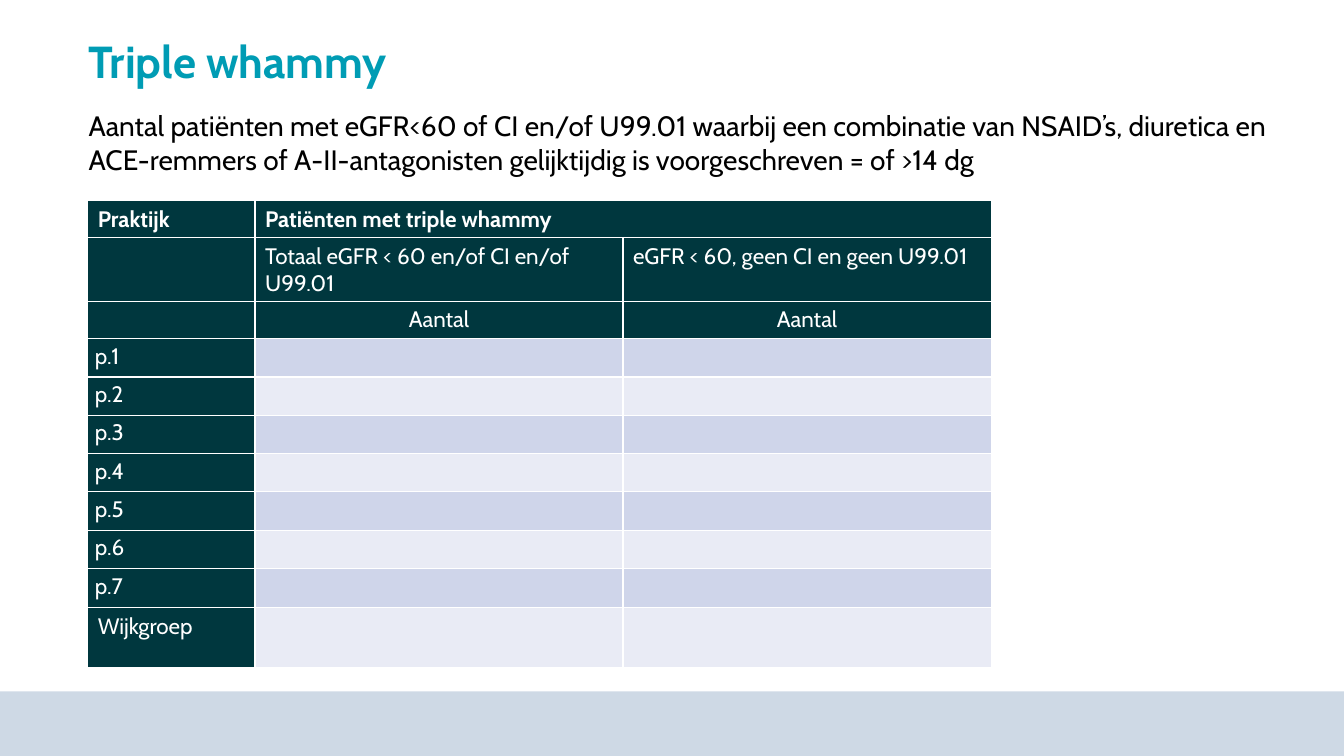
from lxml import etree
from pptx import Presentation
from pptx.dml.color import RGBColor
from pptx.enum.shapes import MSO_SHAPE
from pptx.enum.text import MSO_ANCHOR, PP_ALIGN
from pptx.oxml.ns import qn
from pptx.util import Inches, Pt

LEFT, CENTER = PP_ALIGN.LEFT, PP_ALIGN.CENTER
TOP = MSO_ANCHOR.TOP
RECTANGLE = MSO_SHAPE.RECTANGLE

FONT = "Cabin"
TEAL, DARK, WHITE, BLACK = "009CB4", "00373E", "FFFFFF", "000000"
FOOTER_BLUE = "CED9E5"
BANDS = ["CFD5EA", "E9EBF5"]

TITLE = "Triple whammy"
INTRO = ("Aantal patiënten met eGFR<60 of CI en/of U99.01 waarbij een combinatie "
         "van NSAID’s, diuretica en ACE-remmers of A-II-antagonisten gelijktijdig "
         "is voorgeschreven = of >14 dg")
HEADINGS = [
    ["Praktijk", "Patiënten met triple whammy", ""],
    ["", "Totaal eGFR < 60 en/of CI en/of U99.01", "eGFR < 60, geen CI en geen U99.01"],
    ["", "Aantal", "Aantal"],
]
PRACTICES = [f"p.{number}" for number in range(1, 8)]
TOTAL = "Wijkgroep"

ROWS = HEADINGS + [[label, "", ""] for label in PRACTICES + [TOTAL]]
COLUMN_WIDTHS = [1.66, 3.65, 3.65]
ROW_HEIGHTS = [0.36, 0.63, 0.37] + [0.38] * 6 + [0.39, 0.59]


def rgb(color):
    return RGBColor.from_string(color)


def write(frame, text, size, color, bold=False, align=LEFT):
    frame.word_wrap = True
    frame.text = text
    paragraph = frame.paragraphs[0]
    paragraph.alignment = align
    for run in paragraph.runs:
        run.font.name = FONT
        run.font.size = Pt(size)
        run.font.bold = bold
        run.font.color.rgb = rgb(color)
    return paragraph


def size_empty(cell, size):
    """Give an empty cell a text size, so that its row does not grow."""
    paragraph = cell.text_frame.paragraphs[0]._p
    etree.SubElement(paragraph, qn("a:endParaRPr"), sz=str(size * 100))


prs = Presentation()
prs.slide_width, prs.slide_height = Inches(13.33), Inches(7.5)
slide = prs.slides.add_slide(prs.slide_layouts[5])

footer = slide.shapes.add_shape(RECTANGLE, 0, Inches(6.86), prs.slide_width, Inches(0.64))
footer.shadow.inherit = False
footer.fill.solid()
footer.fill.fore_color.rgb = rgb(FOOTER_BLUE)
footer.line.fill.background()

title = slide.shapes.title
title.left, title.top = Inches(0.78), Inches(0.34)
title.width, title.height = Inches(10.68), Inches(0.59)
write(title.text_frame, TITLE, 32, TEAL, bold=True).line_spacing = 0.9

intro = slide.shapes.add_textbox(Inches(0.78), Inches(1.03), Inches(12.23), Inches(0.77))
write(intro.text_frame, INTRO, 20, BLACK)

table = slide.shapes.add_table(
    len(ROWS), len(COLUMN_WIDTHS), Inches(0.87), Inches(1.99),
    Inches(sum(COLUMN_WIDTHS)), Inches(sum(ROW_HEIGHTS))).table
for column, width in zip(table.columns, COLUMN_WIDTHS):
    column.width = Inches(width)
for row, height in zip(table.rows, ROW_HEIGHTS):
    row.height = Inches(height)
table.cell(0, 1).merge(table.cell(0, 2))

for r, labels in enumerate(ROWS):
    for c, label in enumerate(labels):
        cell = table.cell(r, c)
        is_heading = r < len(HEADINGS) or c == 0
        cell.fill.solid()
        cell.fill.fore_color.rgb = rgb(
            DARK if is_heading else BANDS[(r - len(HEADINGS)) % 2])
        cell.vertical_anchor = TOP
        if not label:
            size_empty(cell, 16)
            continue
        align = CENTER if label == "Aantal" else LEFT
        paragraph = write(cell.text_frame, label, 16, WHITE, bold=r == 0, align=align)
        if label in PRACTICES:
            cell.margin_left = cell.margin_right = Inches(0.07)
            cell.margin_top = cell.margin_bottom = 0
            paragraph.line_spacing = 1.15
            paragraph.space_after = Pt(10)

prs.save("out.pptx")
